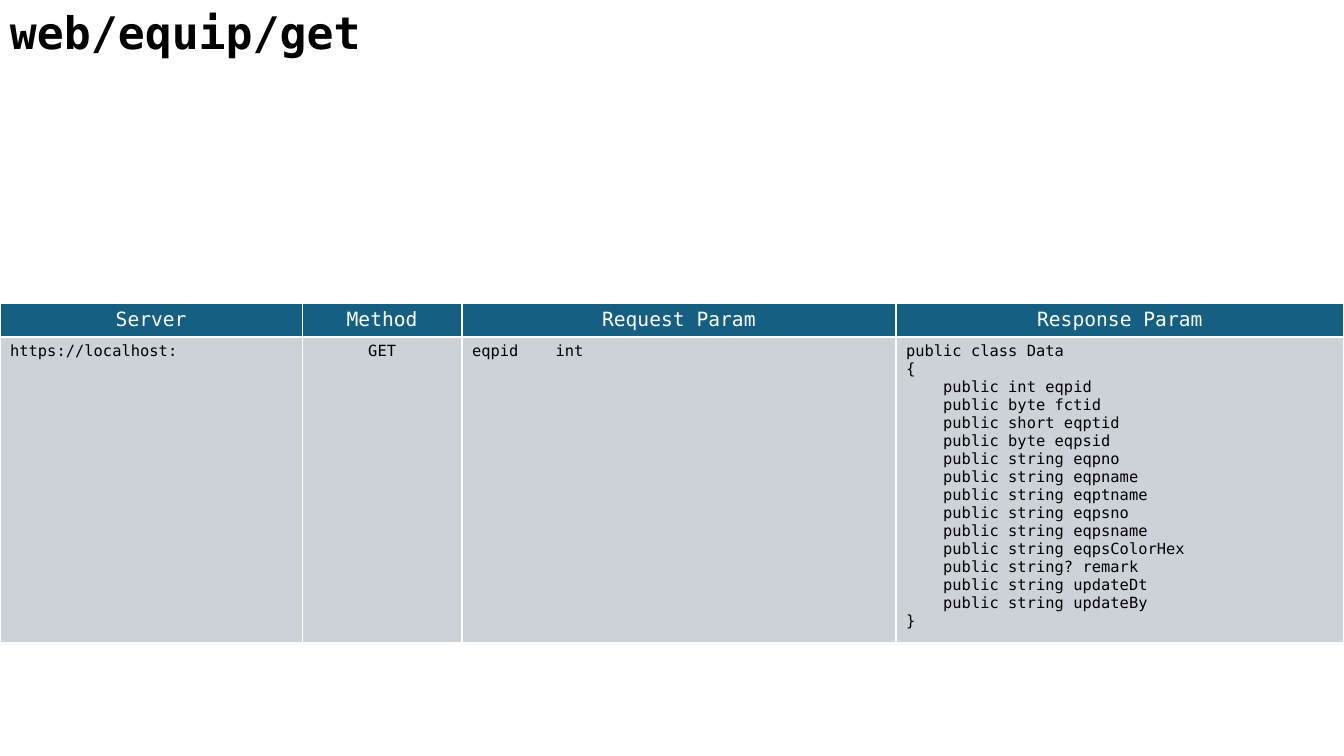
from dataclasses import dataclass

from lxml.etree import SubElement
from pptx import Presentation
from pptx.dml.color import RGBColor
from pptx.enum.text import MSO_AUTO_SIZE, PP_ALIGN
from pptx.oxml.ns import qn
from pptx.slide import Slide
from pptx.table import _Cell
from pptx.text.text import TextFrame
from pptx.util import Pt


@dataclass(frozen=True)
class Theme:
    font: str = "DejaVu Sans Mono"
    text: str = "000000"
    header_text: str = "FFFFFF"
    header_fill: str = "156082"
    body_fill: str = "CCD2D8"
    border: str = "FFFFFF"
    title_size: float = 32
    header_size: float = 14
    body_size: float = 11


@dataclass(frozen=True)
class Column:
    heading: str
    width: float
    body: str
    align: PP_ALIGN = PP_ALIGN.LEFT
    tab: float | None = None


THEME = Theme()
TABLE_TOP = 216.7
HEADER_HEIGHT, BODY_HEIGHT = 24, 218.5

RESPONSE_CODE = """public class Data
{
    public int eqpid
    public byte fctid
    public short eqptid
    public byte eqpsid
    public string eqpno
    public string eqpname
    public string eqptname
    public string eqpsno
    public string eqpsname
    public string eqpsColorHex
    public string? remark
    public string updateDt
    public string updateBy
}"""

COLUMNS = [
    Column("Server", 216, "https://localhost:"),
    Column("Method", 114, "GET", align=PP_ALIGN.CENTER),
    Column("Request Param", 310, "eqpid\tint", tab=59.6),
    Column("Response Param", 320, RESPONSE_CODE),
]


def write_text(tf: TextFrame, text: str, *, size: float, color: str = THEME.text,
               bold: bool = False, align: PP_ALIGN = PP_ALIGN.LEFT,
               tab: float | None = None) -> None:
    """Write one paragraph per line, with an optional left tab stop."""
    for i, line in enumerate(text.split("\n")):
        p = tf.paragraphs[0] if i == 0 else tf.add_paragraph()
        p.alignment = align
        if tab is not None:
            tabs = SubElement(p._p.get_or_add_pPr(), qn("a:tabLst"))
            SubElement(tabs, qn("a:tab"), pos=str(Pt(tab)), algn="l")
        r = p.add_run()
        r.text = line
        r.font.name = THEME.font
        r.font.size = Pt(size)
        r.font.bold = bold
        r.font.color.rgb = RGBColor.from_string(color)


def style_cell(cell: _Cell, fill: str) -> None:
    """Give the cell a border on each side, then its fill."""
    tc_pr = cell._tc.get_or_add_tcPr()
    for side in ("lnL", "lnR", "lnT", "lnB"):
        ln = SubElement(tc_pr, qn(f"a:{side}"), w=str(Pt(1)))
        solid = SubElement(ln, qn("a:solidFill"))
        SubElement(solid, qn("a:srgbClr"), val=THEME.border)
    cell.fill.solid()
    cell.fill.fore_color.rgb = RGBColor.from_string(fill)


def add_title(s: Slide, text: str) -> None:
    tf = s.shapes.add_textbox(Pt(0), Pt(0), Pt(680), Pt(46)).text_frame
    tf.word_wrap = True
    tf.auto_size = MSO_AUTO_SIZE.SHAPE_TO_FIT_TEXT
    write_text(tf, text, size=THEME.title_size, bold=True)


def add_api_table(s: Slide, columns: list[Column]) -> None:
    width = sum(col.width for col in columns)
    table = s.shapes.add_table(2, len(columns), Pt(0), Pt(TABLE_TOP), Pt(width),
                               Pt(HEADER_HEIGHT + BODY_HEIGHT)).table
    table.horz_banding = False
    table.rows[0].height = Pt(HEADER_HEIGHT)
    table.rows[1].height = Pt(BODY_HEIGHT)
    for i, col in enumerate(columns):
        table.columns[i].width = Pt(col.width)
        header, body = table.cell(0, i), table.cell(1, i)
        style_cell(header, THEME.header_fill)
        write_text(header.text_frame, col.heading, size=THEME.header_size,
                   color=THEME.header_text, align=PP_ALIGN.CENTER)
        style_cell(body, THEME.body_fill)
        write_text(body.text_frame, col.body, size=THEME.body_size,
                   align=col.align, tab=col.tab)


def main() -> None:
    prs = Presentation()
    prs.slide_width, prs.slide_height = Pt(960), Pt(540)
    s = prs.slides.add_slide(prs.slide_layouts[6])
    add_title(s, "web/equip/get")
    add_api_table(s, COLUMNS)
    prs.save("out.pptx")


if __name__ == "__main__":
    main()
